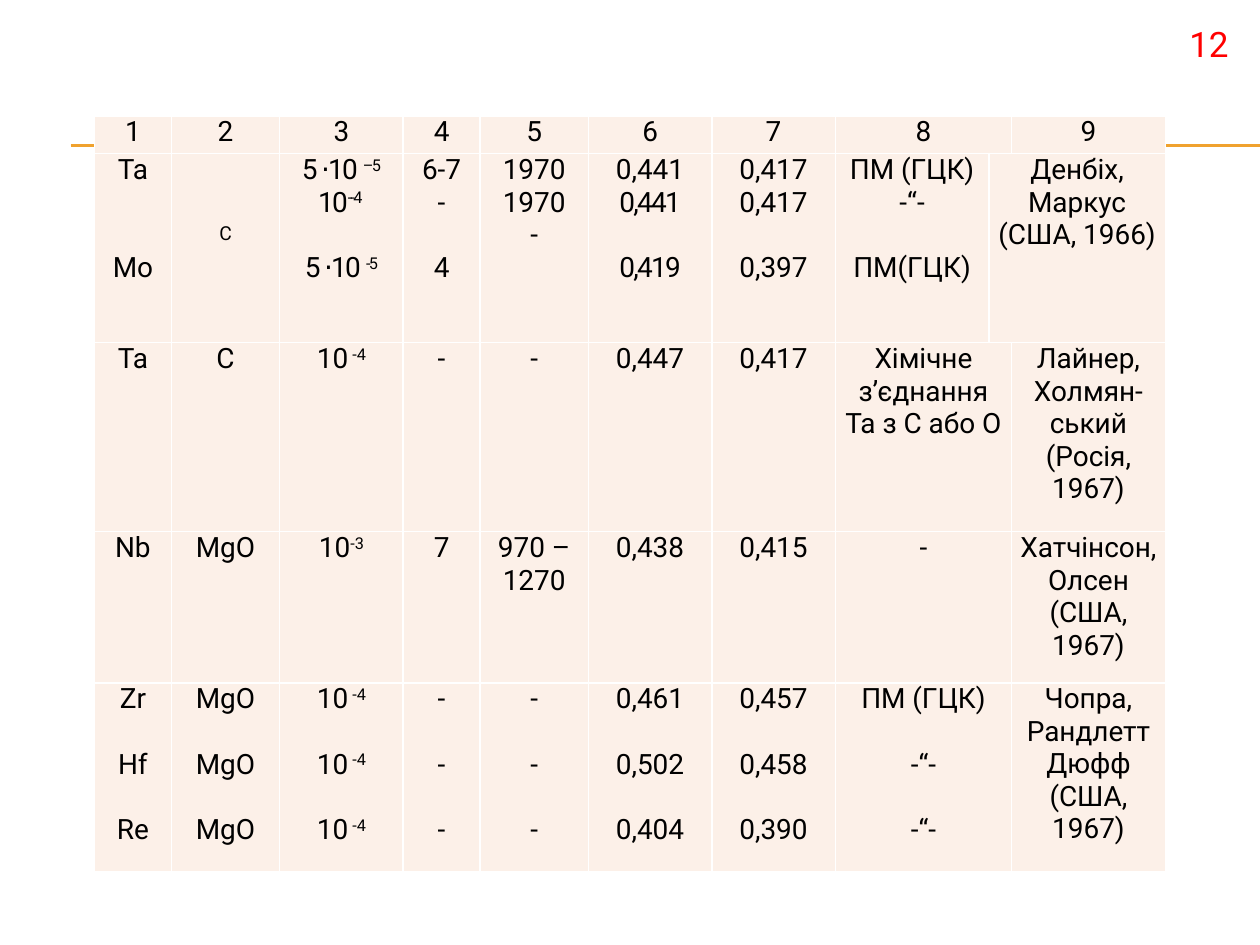
from pptx import Presentation
from pptx import util as u
from pptx.dml.color import RGBColor
from pptx.enum import shapes, text
from pptx.oxml.ns import qn
from lxml import etree

W, H = u.Inches(10), u.Inches(7.5)
FONT = "Roboto"
SIZE = 16
LINE = 18.75
COLS = [0.61, 0.86, 0.98, 0.61, 0.86, 0.98, 0.98, 1.22, 0.18, 1.22]
ROWS = [0.3, 1.5, 1.5, 1.2, 1.5]
WIDE = [7, 8, 7, 7, 7]
HUE = {"rule": "F0A22E", "page": "FF0000", "ink": "000000",
       "cell": "FCF0E8", "edge": "FFFFFF"}

# "/" parts lines, "^" lifts, "~" tightens
DATA = [
    "1|2|3|4|5|6|7|8|9",
    "Ta///Mo|//C|~5 ⋅10 ^–5/~10^--4 //~5 ⋅10 ^-5|6-7/-//4|1970/1970/-"
    "|0,441/~0,441//~0,419|0,417/0,417//0,397|ПМ (ГЦК)/-“-//ПМ(ГЦК)"
    "|Денбіх, Маркус/(США, 1966)",
    "Ta|C|10^ -4|-|-|0,447|0,417|Хімічне з’єднання Та з С або О"
    "|Лайнер, Холмян-ський (Росія, 1967)",
    "Nb|MgO|10^-3|7|970 –1270|0,438|0,415|-|Хатчінсон, Олсен (США, 1967)",
    "Zr//Hf//Re|MgO//MgO//MgO|10^ -4//10^ -4//10^ -4|-//-//-|-//-//-"
    "|0,461//0,502//0,404|0,457//0,458//0,390|ПМ (ГЦК)//-“-//-“-"
    "|Чопра, Рандлетт Дюфф (США, 1967)",
]


def paint(font, size, hue):
    font.name, font.size = FONT, u.Pt(size)
    font.color.rgb = RGBColor.from_string(HUE[hue])


def style(cell):
    cell.margin_left = cell.margin_right = u.Inches(0.07)
    cell.margin_top = cell.margin_bottom = 0
    prop = cell._tc.get_or_add_tcPr()
    for side in ("lnL", "lnR", "lnT", "lnB"):
        line = etree.SubElement(prop, qn("a:" + side), w=str(u.Pt(1)))
        fill = etree.SubElement(line, qn("a:solidFill"))
        etree.SubElement(fill, qn("a:srgbClr"), val=HUE["edge"])
    cell.fill.solid()
    cell.fill.fore_color.rgb = RGBColor.from_string(HUE["cell"])


def write(cell, mark):
    frame, gap, first = cell.text_frame, 0, True
    for part in mark.split("/"):
        if not part:
            gap += 1
            continue
        para = frame.paragraphs[0] if first else frame.add_paragraph()
        para.alignment = text.PP_ALIGN.CENTER
        if first:
            cell.margin_top = u.Pt(gap * LINE)
        elif gap:
            para.space_before = u.Pt(gap * LINE)
        for i, bit in enumerate(part.lstrip("~").split("^")):
            run = para.add_run()
            run.text = bit
            paint(run.font, SIZE, "ink")
            prop = run._r.get_or_add_rPr()
            if i:
                prop.set("baseline", "30000")
            if part.startswith("~"):
                prop.set("spc", "-100")
        gap, first = 0, False


def rules(slide, box):
    x, y, w, h = box
    for top in (y, y + h):
        line = slide.shapes.add_connector(
            shapes.MSO_CONNECTOR.STRAIGHT, x, top, x + w, top)
        line.line.color.rgb = RGBColor.from_string(HUE["rule"])
        line.line.width = u.Pt(0.75)
        etree.SubElement(line._element.spPr, qn("a:effectLst"))


def page(slide, box):
    frame = slide.shapes.add_textbox(*box).text_frame
    frame.word_wrap = True
    para = frame.paragraphs[0]
    para.text = "12"
    para.alignment = text.PP_ALIGN.RIGHT
    paint(para.runs[0].font, 20, "page")


def grid(slide, box):
    table = slide.shapes.add_table(len(ROWS), len(COLS), *box).table
    table.first_row = table.horz_banding = False
    for col, part in zip(table.columns, COLS):
        col.width = int(box[2] * part / sum(COLS))
    for row, part in zip(table.rows, ROWS):
        row.height = int(box[3] * part / sum(ROWS))
    for cell in table.iter_cells():
        style(cell)
    for r, (line, wide) in enumerate(zip(DATA, WIDE)):
        table.cell(r, wide).merge(table.cell(r, wide + 1))
        for c, mark in enumerate(line.split("|")):
            write(table.cell(r, c + (c > wide)), mark)
    para = table.cell(1, 1).text_frame.paragraphs[0]
    para.line_spacing = u.Pt(15)
    para.runs[0].font.size = u.Pt(11)


def share(x, y, w, h):
    return int(W * x), int(H * y), int(W * w), int(H * h)


def main():
    deck = Presentation()
    deck.slide_width, deck.slide_height = W, H
    slide = deck.slides.add_slide(deck.slide_layouts[6])
    rules(slide, share(0.056, 1.15 / 7.5, 0.944, 0.01 / 7.5))
    page(slide, share(0.902, 0.13 / 7.5, 0.083, 0.27 / 7.5))
    grid(slide, share(0.075, 0.92 / 7.5, 0.85, 0.8))
    deck.save("out.pptx")


if __name__ == "__main__":
    main()
